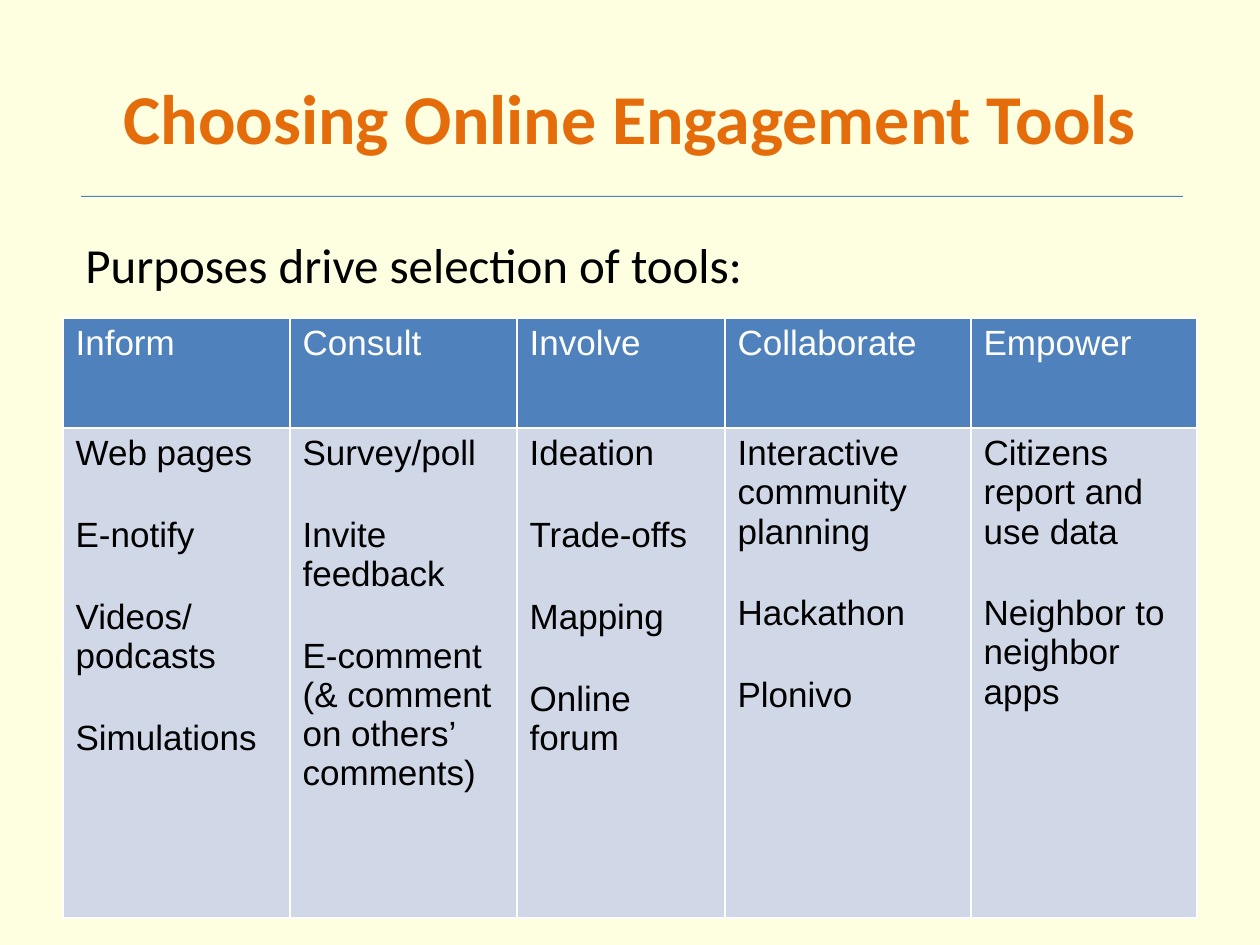
from lxml import etree
from pptx import Presentation
from pptx.dml.color import RGBColor
from pptx.enum.shapes import MSO_SHAPE
from pptx.enum.text import MSO_ANCHOR, PP_ALIGN
from pptx.oxml.ns import qn
from pptx.util import Pt

RECT = MSO_SHAPE.RECTANGLE
MIDDLE, TOP = MSO_ANCHOR.MIDDLE, MSO_ANCHOR.TOP
LEFT, CENTER = PP_ALIGN.LEFT, PP_ALIGN.CENTER
EMU_PER_PX = 914400 / 126
COLORS = {
    "background": "FEFEE1",
    "title": "E46C0A",
    "accent": "4F81BD",
    "body": "D0D8E8",
    "text": "000000",
    "white": "FFFFFF",
}
COLUMNS = [
    ("Inform", 227, ["Web pages", "E-notify", "Videos/podcasts", "Simulations"]),
    ("Consult", 227, ["Survey/poll", "Invite feedback",
                      "E-comment (& comment on others’ comments)"]),
    ("Involve", 208, ["Ideation", "Trade-offs", "Mapping", "Online forum"]),
    ("Collaborate", 246, ["Interactive community planning", "Hackathon", "Plonivo"]),
    ("Empower", 226, ["Citizens report and use data", "Neighbor to neighbor apps"]),
]
ROW_HEIGHTS = [110, 490]


def px(n):
    return round(n * EMU_PER_PX)


def rgb(name):
    return RGBColor.from_string(COLORS[name])


def set_font(p, name, size, color, bold=False):
    p.font.name = name
    p.font.size = Pt(size)
    p.font.bold = bold
    p.font.color.rgb = rgb(color)


def add_text(slide, box, text, size, color, bold=False, align=LEFT, anchor=TOP):
    tf = slide.shapes.add_textbox(*map(px, box)).text_frame
    tf.word_wrap = True
    tf.vertical_anchor = anchor
    p = tf.paragraphs[0]
    p.text = text
    p.alignment = align
    set_font(p, "Calibri", size, color, bold)


def add_header(slide, x, y, w, h):
    add_text(slide, (x, y, w, h), "Choosing Online Engagement Tools",
             40, "title", True, CENTER, MIDDLE)
    rule = slide.shapes.add_shape(RECT, px(x + 18), px(y + h), px(w - 32), px(1))
    rule.shadow.inherit = False
    rule.fill.solid()
    rule.fill.fore_color.rgb = rgb("accent")
    rule.line.fill.background()


def set_borders(cell):
    tcPr = cell._tc.get_or_add_tcPr()
    for side in ("lnL", "lnR", "lnT", "lnB"):
        ln = etree.SubElement(tcPr, qn(f"a:{side}"), w=str(Pt(1)))
        fill = etree.SubElement(ln, qn("a:solidFill"))
        etree.SubElement(fill, qn("a:srgbClr"), val=COLORS["white"])


def fill_cell(cell, items, fill, color):
    set_borders(cell)
    cell.fill.solid()
    cell.fill.fore_color.rgb = rgb(fill)
    tf = cell.text_frame
    for i, item in enumerate(items):
        p = tf.add_paragraph() if i else tf.paragraphs[0]
        p.text = item
        p.space_before = Pt(24.5 if i else 0)
        set_font(p, "Arial", 20, color)


def add_tools_table(slide, x, y, w, h):
    table = slide.shapes.add_table(
        len(ROW_HEIGHTS), len(COLUMNS), px(x), px(y), px(w), px(h)).table
    table.horz_banding = False
    for row, height in zip(table.rows, ROW_HEIGHTS):
        row.height = px(height)
    for c, (purpose, width, tools) in enumerate(COLUMNS):
        table.columns[c].width = px(width)
        fill_cell(table.cell(0, c), [purpose], "accent", "white")
        fill_cell(table.cell(1, c), tools, "body", "text")


def main():
    prs = Presentation()
    prs.slide_width, prs.slide_height = px(1260), px(945)
    s = prs.slides.add_slide(prs.slide_layouts[6])
    s.background.fill.solid()
    s.background.fill.fore_color.rgb = rgb("background")
    add_header(s, 63, 38, 1134, 158)
    add_tools_table(s, 63, 318, 1134, sum(ROW_HEIGHTS))
    add_text(s, (73, 228, 935, 72), "Purposes drive selection of tools:", 28, "text")
    prs.save("out.pptx")


if __name__ == "__main__":
    main()
